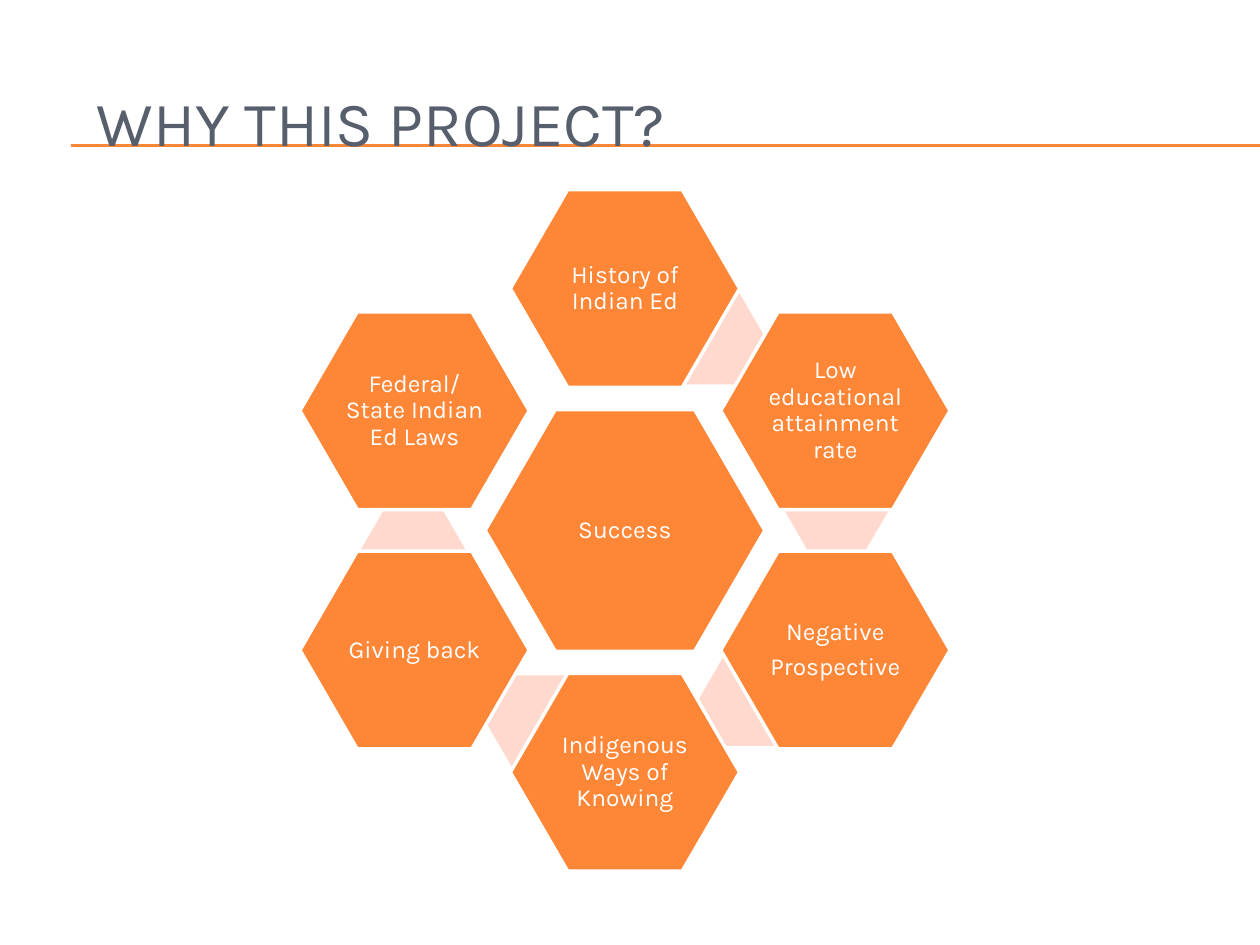
from pptx import Presentation
from pptx.dml.color import RGBColor
from pptx.enum.shapes import MSO_CONNECTOR as Connector, MSO_SHAPE as Shape
from pptx.enum.text import MSO_ANCHOR as Anchor, PP_ALIGN as Align
from pptx.oxml.ns import qn
from pptx.util import Inches, Pt
from lxml import etree

COLORS = {"orange": "FE8637", "peach": "FFD9CE", "slate": "575F6D", "white": "FFFFFF"}
FONT = "Karla"

# Honeycomb grid: three columns and five rows around the middle of the ring
MID_X, MID_Y = 4.96, 4.21
COLUMN = 1.67
ROWS = {-2: -1.92, -1: -0.95, 0: 0, 1: 0.95, 2: 1.92}
CENTER_SIZE, OUTER_SIZE, LINK_SIZE = (2.22, 1.92), (1.82, 1.57), (0.84, 0.72)


def add_hexagon(group, dx, dy, size, fill, lines=()):
    """Add a hexagon centred at an offset from the middle of the ring."""
    width, height = size
    box = group.shapes.add_shape(
        Shape.HEXAGON, Inches(MID_X + dx - width / 2), Inches(MID_Y + dy - height / 2),
        Inches(width), Inches(height))
    box.adjustments[0] = 0.29
    box.shadow.inherit = False
    box.fill.solid()
    box.fill.fore_color.rgb = RGBColor.from_string(COLORS[fill])
    if not lines:
        box.line.fill.background()
        return
    box.line.color.rgb = RGBColor.from_string(COLORS["white"])
    box.line.width = Pt(2)
    frame = box.text_frame
    frame.word_wrap = True
    frame.vertical_anchor = Anchor.MIDDLE
    frame.margin_left = frame.margin_right = Inches(0.02)
    frame.margin_top = frame.margin_bottom = Inches(0.02)
    for index, text in enumerate(lines):
        para = frame.add_paragraph() if index else frame.paragraphs[0]
        para.alignment = Align.CENTER
        para.line_spacing = 0.9
        para.space_after = Pt(5)
        add_span(para, text, 14, "white")


def add_span(para, text, size, color):
    span = para.add_run()
    span.text = text
    span.font.name = FONT
    span.font.size = Pt(size)
    span.font.color.rgb = RGBColor.from_string(COLORS[color])


deck = Presentation()
deck.slide_width, deck.slide_height = Inches(10), Inches(7.5)
page = deck.slides.add_slide(deck.slide_layouts[6])

# Double rule under the title
for y in (1.15, 1.16):
    rule = page.shapes.add_connector(
        Connector.STRAIGHT, Inches(0.56), Inches(y), deck.slide_width, Inches(y))
    rule.line.color.rgb = RGBColor.from_string(COLORS["orange"])
    rule.line.width = Pt(0.75)
    etree.SubElement(rule.element.spPr, qn("a:effectLst"))

# Title
title = page.shapes.add_textbox(Inches(0.67), Inches(0.5), Inches(9.16), Inches(0.92))
title.text_frame.word_wrap = True
title.text_frame.vertical_anchor = Anchor.MIDDLE
add_span(title.text_frame.paragraphs[0], "WHY THIS PROJECT?", 36, "slate")

# Ring, clockwise from the top: column, row, text, offset of the link to the next one
reasons = [
    (0, -2, ["History of Indian Ed"], (0.7, -1.52)),
    (1, -1, ["Low educational attainment rate"], (1.68, -0.17)),
    (1, 1, ["Negative", "Prospective"], (1, 1.35)),
    (0, 2, ["Indigenous Ways of Knowing"], (-0.69, 1.51)),
    (-1, 1, ["Giving back"], (-1.68, 0.16)),
    (-1, -1, ["Federal/State Indian Ed Laws"], None),
]
ring = page.shapes.add_group_shape()
add_hexagon(ring, 0, 0, CENTER_SIZE, "orange", ["Success"])
for column, row, lines, link in reasons:
    if link:
        add_hexagon(ring, *link, LINK_SIZE, "peach")
    add_hexagon(ring, column * COLUMN, ROWS[row], OUTER_SIZE, "orange", lines)

deck.save("out.pptx")
